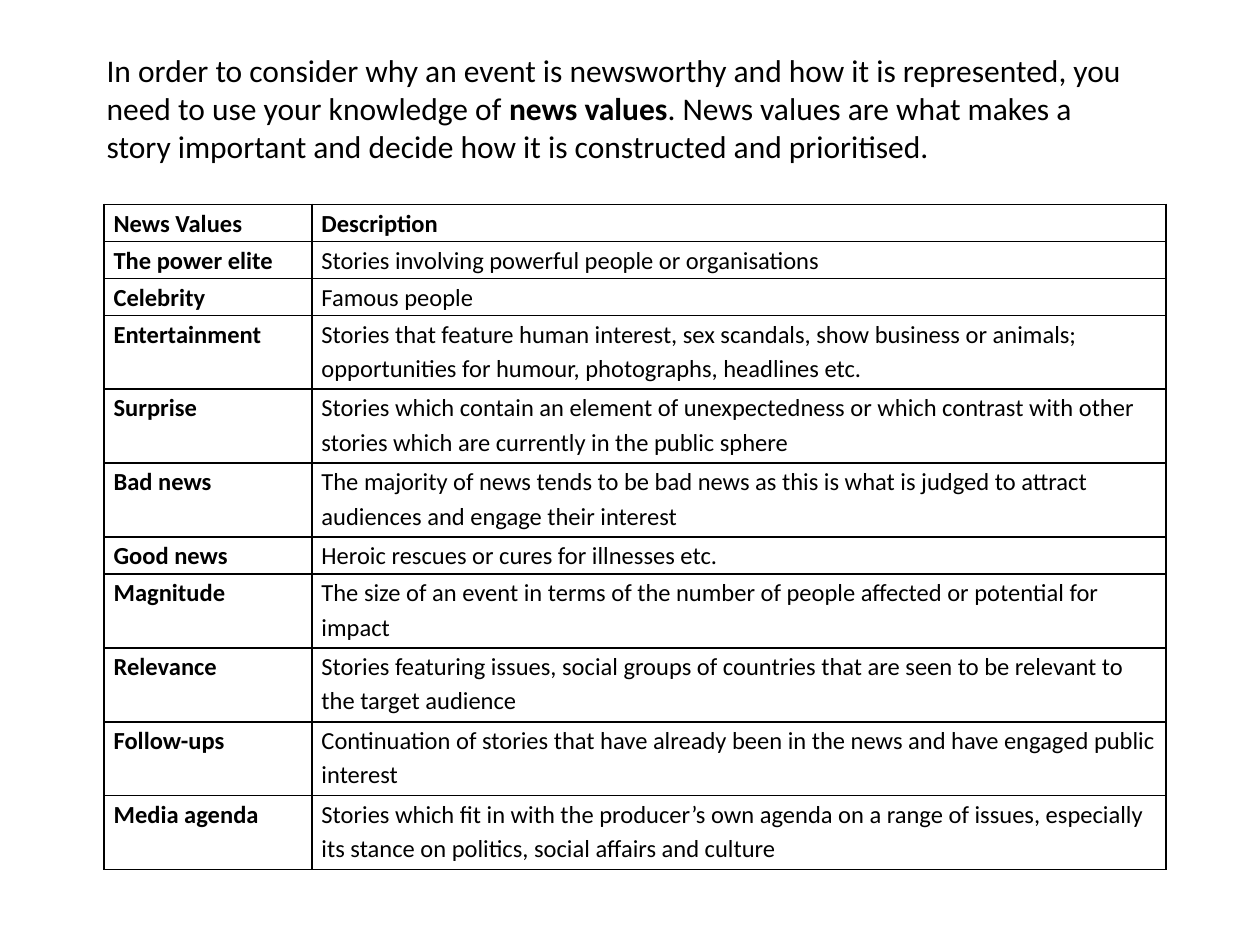
"""Build a slide that introduces news values and lists them in a table."""
from lxml.etree import SubElement
from pptx import Presentation
from pptx.dml.color import RGBColor as Rgb
from pptx.oxml.ns import qn
from pptx.util import Cm, Pt

COLOURS = {"ink": "000000", "border": "000000"}
FONT = "Calibri"
HALF_ROW = 1.49 / 2

INTRO = [
    ("In order to consider why an event is newsworthy and how it is represented, "
     "you need to use your knowledge of ", False),
    ("news values", True),
    (". News values are what makes a story important and decide how it is "
     "constructed and prioritised.", False),
]

NEWS_VALUES = [
    ("News Values", "Description", 1),
    ("The power elite", "Stories involving powerful people or organisations", 1),
    ("Celebrity", "Famous people", 1),
    ("Entertainment", "Stories that feature human interest, sex scandals, show business "
     "or animals; opportunities for humour, photographs, headlines etc.", 2),
    ("Surprise", "Stories which contain an element of unexpectedness or which contrast "
     "with other stories which are currently in the public sphere", 2),
    ("Bad news", "The majority of news tends to be bad news as this is what is judged "
     "to attract audiences and engage their interest", 2),
    ("Good news", "Heroic rescues or cures for illnesses etc.", 1),
    ("Magnitude", "The size of an event in terms of the number of people affected or "
     "potential for impact", 2),
    ("Relevance", "Stories featuring issues, social groups of countries that are seen "
     "to be relevant to the target audience", 2),
    ("Follow-ups", "Continuation of stories that have already been in the news and have "
     "engaged public interest", 2),
    ("Media agenda", "Stories which fit in with the producer’s own agenda on a range of "
     "issues, especially its stance on politics, social affairs and culture", 2),
]


def add_text(paragraph, text, size=14, bold=False, colour="ink"):
    run = paragraph.add_run()
    run.text = text
    run.font.name = FONT
    run.font.size = Pt(size)
    run.font.bold = bold
    run.font.color.rgb = Rgb.from_string(COLOURS[colour])


class SlideBuilder:
    def __init__(self, slide):
        self.slide = slide

    def intro(self, left, top, width, height, parts):
        box = self.slide.shapes.add_textbox(Cm(left), Cm(top), Cm(width), Cm(height))
        box.text_frame.word_wrap = True
        for text, bold in parts:
            add_text(box.text_frame.paragraphs[0], text, size=18, bold=bold)

    def border(self, cell):
        properties = cell._tc.get_or_add_tcPr()
        for side in ("lnL", "lnR", "lnT", "lnB"):
            line = SubElement(properties, qn(f"a:{side}"), w=str(Pt(1)))
            fill = SubElement(line, qn("a:solidFill"))
            SubElement(fill, qn("a:srgbClr"), val=COLOURS["border"])

    def cell(self, cell, text, bold):
        cell.margin_left = cell.margin_right = Cm(0.19)
        cell.margin_top = cell.margin_bottom = 0
        self.border(cell)
        cell.fill.background()
        paragraph = cell.text_frame.paragraphs[0]
        paragraph.line_spacing = 1.15
        add_text(paragraph, text, bold=bold)

    def table(self, left, top, widths, rows):
        height = HALF_ROW * sum(lines for _, _, lines in rows)
        table = self.slide.shapes.add_table(
            len(rows), len(widths), Cm(left), Cm(top), Cm(sum(widths)), Cm(height)).table
        table.first_row = table.horz_banding = False
        for column, width in zip(table.columns, widths):
            column.width = Cm(width)
        for index, (name, description, lines) in enumerate(rows):
            table.rows[index].height = Cm(HALF_ROW * lines)
            self.cell(table.cell(index, 0), name, bold=True)
            self.cell(table.cell(index, 1), description, bold=index == 0)


def main():
    deck = Presentation()
    deck.slide_width, deck.slide_height = Cm(25.4), Cm(19.05)
    builder = SlideBuilder(deck.slides.add_slide(deck.slide_layouts[6]))
    builder.intro(1.9, 0.91, 21.2, 2.57, INTRO)
    builder.table(2.1, 4.12, (4.19, 17.22), NEWS_VALUES)
    deck.save("out.pptx")


if __name__ == "__main__":
    main()
